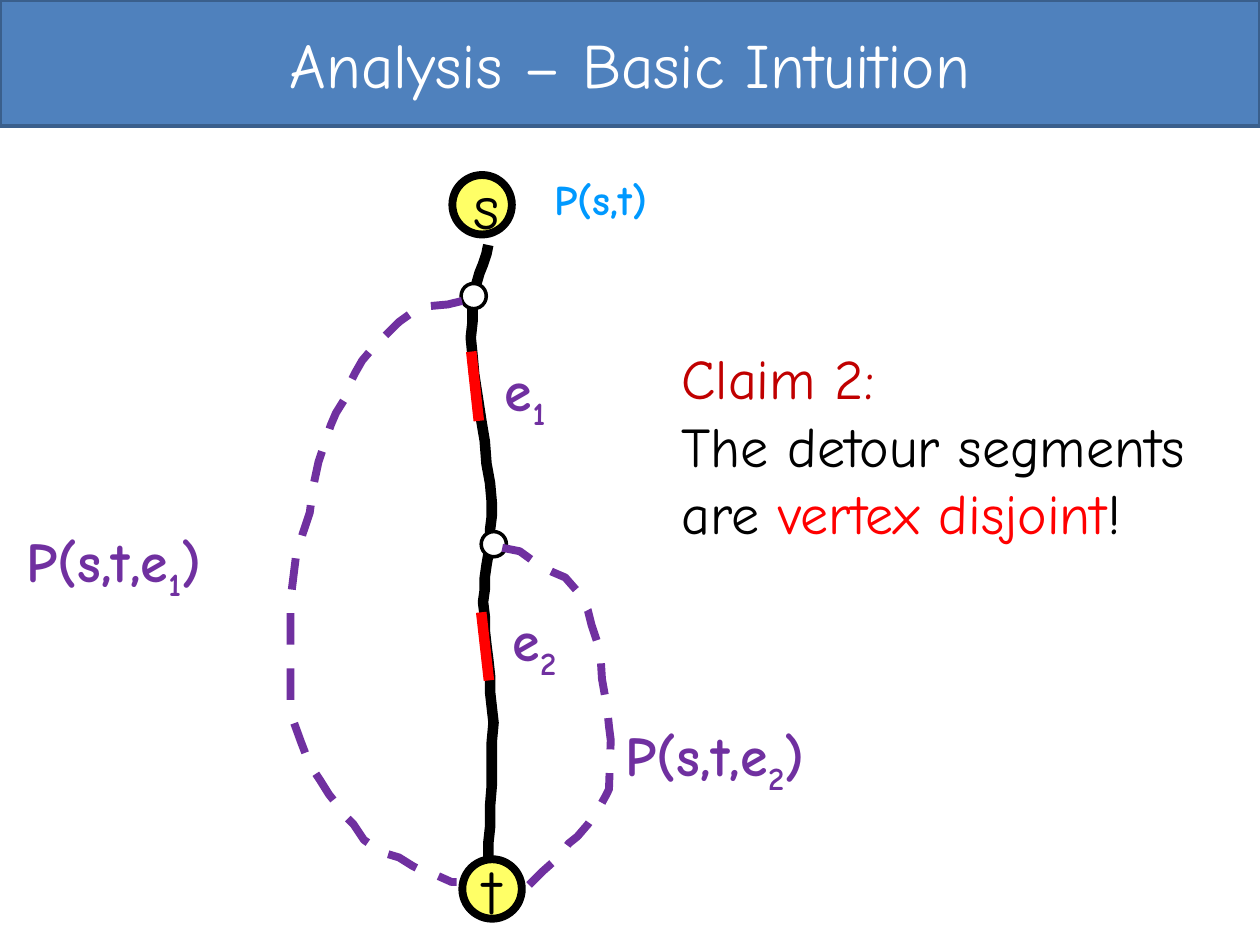
from dataclasses import dataclass

from lxml import etree
from pptx import Presentation
from pptx.dml.color import RGBColor
from pptx.enum.dml import MSO_LINE
from pptx.enum.shapes import MSO_CONNECTOR, MSO_SHAPE
from pptx.enum.text import MSO_ANCHOR, MSO_AUTO_SIZE, PP_ALIGN
from pptx.oxml.ns import qn
from pptx.util import Pt

RECTANGLE, CIRCLE = MSO_SHAPE.RECTANGLE, MSO_SHAPE.OVAL
STRAIGHT = MSO_CONNECTOR.STRAIGHT
DASH = MSO_LINE.DASH
MIDDLE, CENTER = MSO_ANCHOR.MIDDLE, PP_ALIGN.CENTER
FIT_SHAPE = MSO_AUTO_SIZE.SHAPE_TO_FIT_TEXT


@dataclass(frozen=True)
class Theme:
    font: str = "Comic Neue"
    title_size: int = 36
    label_size: int = 32
    path_size: int = 24
    banner: str = "4F81BD"
    banner_edge: str = "3A5F8C"
    white: str = "FFFFFF"
    black: str = "000000"
    terminal: str = "FFFF66"
    failed_edge: str = "FF0000"
    detour: str = "7030A0"
    path_label: str = "0099FF"
    claim: str = "C00000"


THEME = Theme()

PATH_START = (279.4, 139.7)
PATH_CURVES = [
    ((274.3, 154.1), (269.3, 168.5), (269.3, 193)),
    ((269.3, 217.4), (279.4, 261.4), (280.8, 286.6)),
    ((281.5, 311.8), (275.8, 323.3), (276.5, 344.2)),
    ((276.5, 365), (280.8, 388.8), (281.5, 413.3)),
    ((281.5, 437.8), (278.6, 491), (278.6, 491)),
]
DETOUR_1 = [
    (264.2, 172.1), (255.6, 173.5), (244.8, 175), (235.4, 179.3), (228.2, 183.6),
    (221.8, 190.1), (213.1, 199.4), (207.4, 205.9), (203, 213.1), (198.7, 221),
    (196.6, 227.5), (191.5, 236.2), (188.6, 243.4), (185.8, 252), (182.2, 263.5),
    (178.6, 277.9), (177.1, 293), (172.8, 304.6), (169.2, 319), (166.3, 343.4),
    (165.6, 349.9), (166.3, 401.8), (168.5, 412.6), (172.1, 424.1), (177.1, 437),
    (182.9, 445.7), (187.9, 453.6), (191.5, 459.4), (197.3, 465.8), (202.3, 470.9),
    (208.1, 479.5), (218.2, 486.7), (227.5, 490.3), (236.2, 495.4), (241.9, 498.2),
    (249.1, 500.4), (257.8, 504), (261.4, 504),
]
DETOUR_2 = [
    (286.6, 313.2), (297.4, 315.4), (308.2, 323.3), (316.1, 326.9), (322.6, 330.5),
    (329.8, 338.4), (335.5, 349.2), (338.4, 357.1), (342.7, 371.5), (344.2, 388.1),
    (347, 404.6), (348.5, 415.4), (349.2, 423.4), (348.5, 450.7), (346.3, 455),
    (341.3, 464.4), (336.2, 470.9), (330.5, 478.1), (324.7, 482.4), (319, 489.6),
    (310.3, 497.5), (301.7, 506.2), (297.4, 507.6),
]


def rgb(color):
    return RGBColor.from_string(color)


def style_line(line, color, width):
    line.color.rgb = rgb(color)
    line.width = Pt(width)


def style_run(run, size, color, bold=False):
    run.font.name = THEME.font
    run.font.size = Pt(size)
    run.font.bold = bold
    run.font.color.rgb = rgb(color)


def add_filled(slide, preset, box, fill, edge, width, text=""):
    shape = slide.shapes.add_shape(preset, *map(Pt, box))
    shape.shadow.inherit = False
    shape.fill.solid()
    shape.fill.fore_color.rgb = rgb(fill)
    style_line(shape.line, edge, width)
    if text:
        frame = shape.text_frame
        frame.text = text
        frame.vertical_anchor = MIDDLE
        frame.paragraphs[0].alignment = CENTER
        color = THEME.white if preset == RECTANGLE else THEME.black
        style_run(frame.paragraphs[0].runs[0], THEME.title_size, color)


def add_terminal(slide, left, top, name):
    add_filled(slide, CIRCLE, (left, top, 34, 34), THEME.terminal, THEME.black, 4.5, name)


def add_junction(slide, left, top):
    add_filled(slide, CIRCLE, (left, top, 14.4, 14.4), THEME.white, THEME.black, 2)


def add_failed_edge(slide, start, end):
    edge = slide.shapes.add_connector(STRAIGHT, *map(Pt, start + end))
    style_line(edge.line, THEME.failed_edge, 6)
    etree.SubElement(edge._element.spPr, qn("a:effectLst"))


def sample_curves(start, curves, steps=8):
    points = [start]
    for first, second, end in curves:
        origin = points[-1]
        for step in range(1, steps + 1):
            t = step / steps
            u = 1 - t
            points.append(tuple(
                u**3 * a + 3 * u * u * t * b + 3 * u * t * t * c + t**3 * d
                for a, b, c, d in zip(origin, first, second, end)))
    return points


def add_route(slide, points, color, width, dash=None):
    builder = slide.shapes.build_freeform(*points[0], scale=Pt(1))
    builder.add_line_segments(points[1:], close=False)
    route = builder.convert_to_shape()
    route.shadow.inherit = False
    route.fill.background()
    style_line(route.line, color, width)
    if dash:
        route.line.dash_style = dash


def add_label(slide, box, lines, size, bold=True):
    label = slide.shapes.add_textbox(*map(Pt, box))
    frame = label.text_frame
    frame.word_wrap = False
    frame.auto_size = FIT_SHAPE
    for number, pieces in enumerate(lines):
        paragraph = frame.add_paragraph() if number else frame.paragraphs[0]
        for text, color in pieces:
            run = paragraph.add_run()
            run.text = text
            style_run(run, size, color, bold)
    return label


def add_indexed_label(slide, box, *texts):
    pieces = [(text, THEME.detour) for text in texts]
    label = add_label(slide, box, [pieces], THEME.label_size)
    index = label.text_frame.paragraphs[0].runs[1]
    index.font._element.set("baseline", "-25000")


def main():
    deck = Presentation()
    deck.slide_width, deck.slide_height = Pt(720), Pt(540)
    slide = deck.slides.add_slide(deck.slide_layouts[6])

    add_filled(slide, RECTANGLE, (0, 0, 720, 72), THEME.banner, THEME.banner_edge, 2,
               "Analysis – Basic Intuition")
    add_route(slide, sample_curves(PATH_START, PATH_CURVES), THEME.black, 6)
    add_failed_edge(slide, (269.3, 200.9), (273.6, 240.5))
    add_indexed_label(slide, (281.5, 199.4, 45.4, 46), "e", "1")
    add_terminal(slide, 258.5, 100, "s")
    add_terminal(slide, 264.2, 491, "t")
    add_junction(slide, 263.5, 162)
    add_indexed_label(slide, (7.9, 297.4, 145.4, 46), "P(s,t,e", "1", ")")
    add_failed_edge(slide, (275, 349.9), (279.4, 388.8))
    add_indexed_label(slide, (285.8, 342.7, 45.4, 46), "e", "2")
    add_label(slide, (309.6, 95.8, 78.5, 36), [[("P(s,t)", THEME.path_label)]],
              THEME.path_size)
    add_route(slide, DETOUR_1, THEME.detour, 4.5, DASH)
    add_junction(slide, 275, 303.8)
    add_route(slide, DETOUR_2, THEME.detour, 4.5, DASH)
    add_indexed_label(slide, (350.6, 408.2, 145.4, 46), "P(s,t,e", "2", ")")
    claim = [
        [("Claim 2:", THEME.claim)],
        [("The detour segments", THEME.black)],
        [("are ", THEME.black), ("vertex disjoint", THEME.failed_edge), ("!", THEME.black)],
    ]
    add_label(slide, (382.3, 193, 334.8, 123.8), claim, THEME.label_size, bold=False)
    deck.save("out.pptx")


if __name__ == "__main__":
    main()
